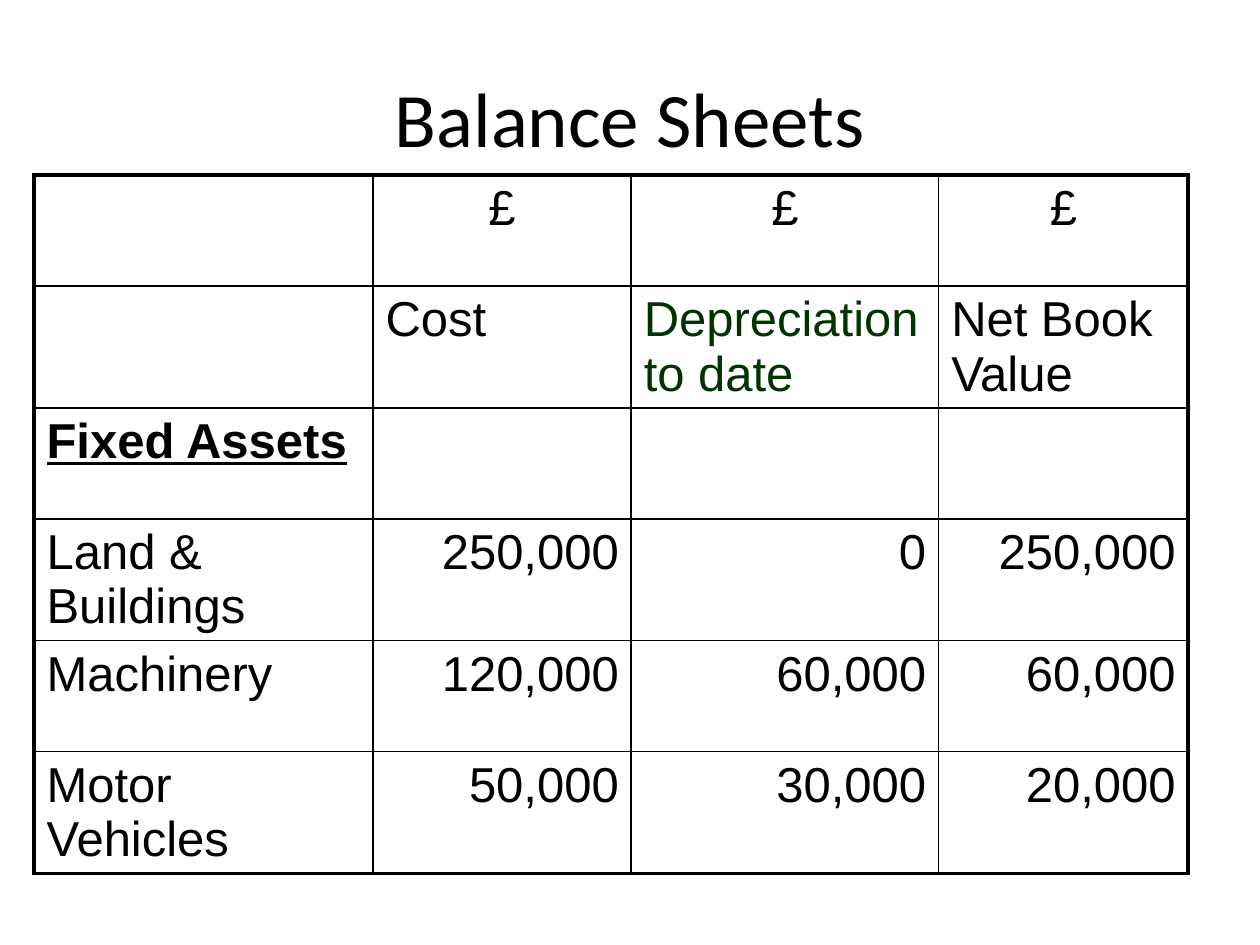
import pptx
import pptx.dml.color
import pptx.enum.text
import pptx.oxml.ns
import pptx.util
from lxml import etree

COLORS = {"ink": "000000", "depreciation": "003300"}
ALIGN = pptx.enum.text.PP_ALIGN
ROWS = [
    ["", "£", "£", "£"],
    ["", "Cost", "Depreciation to date", "Net Book Value"],
    ["Fixed Assets", "", "", ""],
    ["Land & Buildings", "250,000", "0", "250,000"],
    ["Machinery", "120,000", "60,000", "60,000"],
    ["Motor Vehicles", "50,000", "30,000", "20,000"],
]
COLUMN_WIDTHS = [26.9, 20.5, 24.4, 19.8]
ROW_HEIGHTS = [8.8, 9.5, 8.8, 8.8, 8.8, 9.5]


def write(frame, text, font="Arial", size=28, color="ink", align=ALIGN.LEFT,
          bold=False, underline=False):
    paragraph = frame.paragraphs[0]
    paragraph.alignment = align
    run = paragraph.add_run()
    run.text = text
    run.font.name = font
    run.font.size = pptx.util.Pt(size)
    run.font.bold = bold
    run.font.underline = underline
    run.font.color.rgb = pptx.dml.color.RGBColor.from_string(COLORS[color])


def cell_format(row, column):
    if row == 0:
        return {"align": ALIGN.CENTER}
    if row == 1 and column == 2:
        return {"color": "depreciation"}
    if row == 2:
        return {"bold": True, "underline": True}
    if row > 2 and column > 0:
        return {"align": ALIGN.RIGHT}
    return {}


class BalanceSlide:
    """Hold the style and the current slide, measured on a 100 by 75 grid."""

    outer, inner = 2.25, 1

    def __init__(self, deck):
        self.unit = deck.slide_width / 100
        self.slide = deck.slides.add_slide(deck.slide_layouts[5])

    def grid(self, *counts):
        return [pptx.util.Emu(round(count * self.unit)) for count in counts]

    def title(self, text, *box):
        heading = self.slide.shapes.title
        heading.left, heading.top, heading.width, heading.height = self.grid(*box)
        heading.text_frame.vertical_anchor = pptx.enum.text.MSO_ANCHOR.MIDDLE
        write(heading.text_frame, text, font="Calibri", size=44, align=ALIGN.CENTER)

    def border(self, cell, side, width):
        qn = pptx.oxml.ns.qn
        line = etree.SubElement(cell._tc.get_or_add_tcPr(), qn(f"a:ln{side}"),
                                w=str(pptx.util.Pt(width)))
        fill = etree.SubElement(line, qn("a:solidFill"))
        etree.SubElement(fill, qn("a:srgbClr"), val=COLORS["ink"])

    def table(self, rows, left, top, widths, heights):
        box = self.grid(left, top, sum(widths), sum(heights))
        sheet = self.slide.shapes.add_table(len(rows), len(widths), *box).table
        sheet.first_row = sheet.horz_banding = False
        for column, width in zip(sheet.columns, self.grid(*widths)):
            column.width = width
        for row, height in zip(sheet.rows, self.grid(*heights)):
            row.height = height
        last_row, last_column = len(rows) - 1, len(widths) - 1
        for r, texts in enumerate(rows):
            for c, text in enumerate(texts):
                cell = sheet.cell(r, c)
                edges = {"L": c == 0, "R": c == last_column,
                         "T": r == 0, "B": r == last_row}
                for side, is_outer in edges.items():
                    self.border(cell, side, self.outer if is_outer else self.inner)
                cell.fill.background()
                if text:
                    write(cell.text_frame, text, **cell_format(r, c))


def main():
    deck = pptx.Presentation()
    deck.slide_width = pptx.util.Inches(10)
    deck.slide_height = pptx.util.Inches(7.5)
    balance = BalanceSlide(deck)
    balance.title("Balance Sheets", 5, 3, 90, 12.5)
    balance.table(ROWS, 2.7, 13.9, COLUMN_WIDTHS, ROW_HEIGHTS)
    deck.save("out.pptx")


if __name__ == "__main__":
    main()
